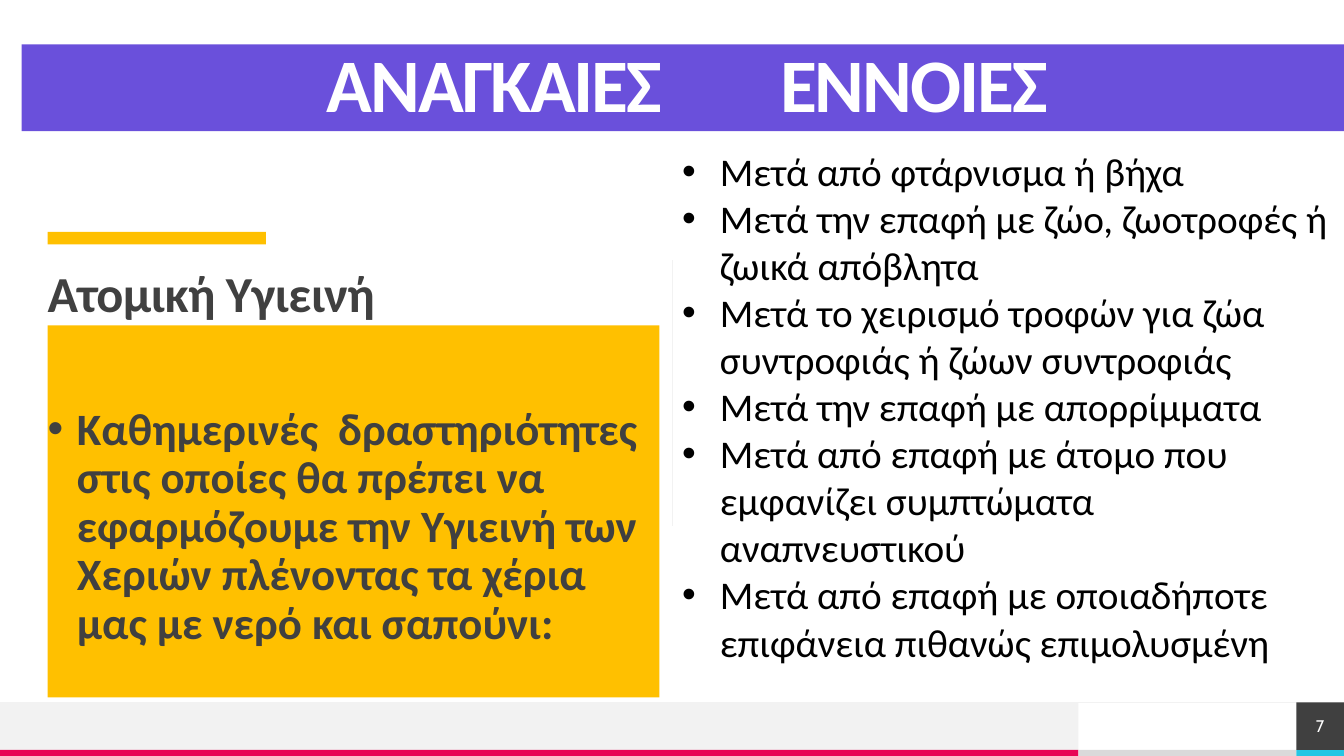
from lxml.etree import SubElement
from pptx import Presentation
from pptx.dml.color import RGBColor
from pptx.enum.shapes import MSO_CONNECTOR as Connector, MSO_SHAPE as Shape
from pptx.enum.text import MSO_ANCHOR as Anchor, MSO_AUTO_SIZE as AutoSize, PP_ALIGN as Align
from pptx.oxml.ns import qn
from pptx.util import Pt

# Content
TITLE = ("ΑΝΑΓΚΑΙΕΣ", "ΕΝΝΟΙΕΣ")
HEADING = "Ατομική Υγιεινή"
STATEMENT = ("Καθημερινές  δραστηριότητες στις οποίες θα πρέπει να εφαρμόζουμε "
             "την Υγιεινή των Χεριών πλένοντας τα χέρια μας με νερό και σαπούνι:")
OCCASIONS = [
    "Μετά από φτάρνισμα ή βήχα",
    "Μετά την επαφή με ζώο, ζωοτροφές ή ζωικά απόβλητα",
    "Μετά το χειρισμό τροφών για ζώα συντροφιάς ή ζώων συντροφιάς",
    "Μετά την επαφή με απορρίμματα",
    "Μετά από επαφή με άτομο που εμφανίζει συμπτώματα αναπνευστικού",
    "Μετά από επαφή με οποιαδήποτε επιφάνεια πιθανώς επιμολυσμένη",
]
PAGE_NUMBER = "7"


class Theme:
    body_font, number_font = "Calibri", "Cabin"
    purple, yellow, pink, cyan = "6A50DB", "FFC000", "E80554", "25C6E3"
    dark, pale, grey, white, black = "404040", "F2F2F2", "DADADA", "FFFFFF", "000000"
    title, heading, statement, occasion, number = 54, 36, 32, 28, 12


# Geometry in points
WIDTH, HEIGHT = 960, 540
MARGIN = 34
MIDDLE = WIDTH / 2
STRIPE = 4.3
BADGE = 34
FOOTER_TOP = HEIGHT - STRIPE - BADGE
STRIPE_TOP = HEIGHT - STRIPE
BAND_WIDTH = 770.4
BADGE_LEFT = WIDTH - BADGE
TITLE_GAP = 72

presentation = Presentation()
presentation.slide_width, presentation.slide_height = Pt(WIDTH), Pt(HEIGHT)
slide = presentation.slides.add_slide(presentation.slide_layouts[4])
holders = {holder.placeholder_format.idx: holder for holder in slide.placeholders}


def paint(shape, color):
    shape.fill.solid()
    shape.fill.fore_color.rgb = RGBColor.from_string(color)


def add_box(left, top, width, height, color):
    shape = slide.shapes.add_shape(Shape.RECTANGLE, Pt(left), Pt(top), Pt(width), Pt(height))
    shape.shadow.inherit = False
    paint(shape, color)
    shape.line.fill.background()
    return shape


def add_rule(x1, y1, x2, y2):
    line = slide.shapes.add_connector(Connector.STRAIGHT, Pt(x1), Pt(y1), Pt(x2), Pt(y2))
    line.line.color.rgb = RGBColor.from_string(Theme.pale)
    line.line.width = Pt(0.5)
    SubElement(line._element.spPr, qn("a:effectLst"))


def place(shape, left, top, width, height):
    shape.left, shape.top, shape.width, shape.height = map(Pt, (left, top, width, height))


def set_frame(shape, anchor=Anchor.TOP, insets=(0, 0, 0, 0)):
    frame = shape.text_frame
    frame.word_wrap, frame.auto_size, frame.vertical_anchor = True, AutoSize.NONE, anchor
    (frame.margin_left, frame.margin_top,
     frame.margin_right, frame.margin_bottom) = map(Pt, insets)


def write(shape, text, *, size, color, font=Theme.body_font, bold=False, align=Align.LEFT,
          leading=1.0, tracking=0, indent=0):
    """Append a paragraph; text is a string or a list of (string, tracking) runs."""
    frame = shape.text_frame
    paragraph = frame.paragraphs[0] if not frame.text else frame.add_paragraph()
    paragraph.alignment, paragraph.line_spacing = align, leading
    paragraph.space_before = paragraph.space_after = Pt(0)
    properties = paragraph._p.get_or_add_pPr()
    properties.set("marL", str(Pt(indent)))
    properties.set("indent", str(Pt(-indent)))
    if indent:
        SubElement(properties, qn("a:buFont"), typeface="Arial")
        SubElement(properties, qn("a:buChar"), char="•")
    else:
        SubElement(properties, qn("a:buNone"))
    for words, spacing in ([(text, tracking)] if isinstance(text, str) else text):
        run = paragraph.add_run()
        run.text = words
        run.font.name, run.font.size, run.font.bold = font, Pt(size), bold
        run.font.color.rgb = RGBColor.from_string(color)
        run._r.get_or_add_rPr().set("spc", str(round(spacing * 100)))


# Footer band, stripes and rule
add_box(0, FOOTER_TOP, BAND_WIDTH, BADGE, Theme.pale)
for left, right, color in [(0, BAND_WIDTH, Theme.pink),
                           (BAND_WIDTH, BADGE_LEFT, Theme.grey),
                           (BADGE_LEFT, WIDTH, Theme.cyan)]:
    add_box(left, STRIPE_TOP, right - left, STRIPE, color)
add_rule(WIDTH, FOOTER_TOP, 0, FOOTER_TOP)

# Page number
badge = add_box(BADGE_LEFT, FOOTER_TOP, BADGE, BADGE, Theme.dark)
set_frame(badge, Anchor.MIDDLE)
write(badge, PAGE_NUMBER, size=Theme.number, color=Theme.white, font=Theme.number_font,
      align=Align.CENTER)

# Title band, with one widened space between the words
title = holders[0]
place(title, 15.4, 31.7, WIDTH - 15.4, 62)
paint(title, Theme.purple)
set_frame(title, Anchor.MIDDLE, (6.5, 0, 0, 0))
write(title, [(TITLE[0], -1.5), (" ", TITLE_GAP), (TITLE[1], -1.5)], size=Theme.title,
      color=Theme.white, bold=True, align=Align.CENTER, leading=0.9)

# Left column: accent, heading and statement
add_box(MARGIN, 165.6, 156, 9, Theme.yellow)
heading = holders[1]
place(heading, MARGIN, 192.2, 430.6, 28)
set_frame(heading)
write(heading, HEADING, size=Theme.heading, color=Theme.dark, bold=True, leading=0.9,
      tracking=-0.4)

statement = holders[2]
place(statement, MARGIN, 232.5, 437, 265.7)
paint(statement, Theme.yellow)
set_frame(statement, insets=(0, 58, 0, 0))
write(statement, STATEMENT, size=Theme.statement, color=Theme.dark, bold=True, leading=0.9,
      indent=21)

# Column divider and right list
add_rule(MIDDLE, 185.8, MIDDLE, 375.8)
occasions = holders[4]
place(occasions, MIDDLE, 101.5, MIDDLE, 380)
set_frame(occasions, insets=(7.2, 3.6, 7.2, 3.6))
for occasion in OCCASIONS:
    write(occasions, occasion, size=Theme.occasion, color=Theme.black, indent=27)

# Unused placeholder
spare = holders[3]._element
spare.getparent().remove(spare)

presentation.save("out.pptx")
